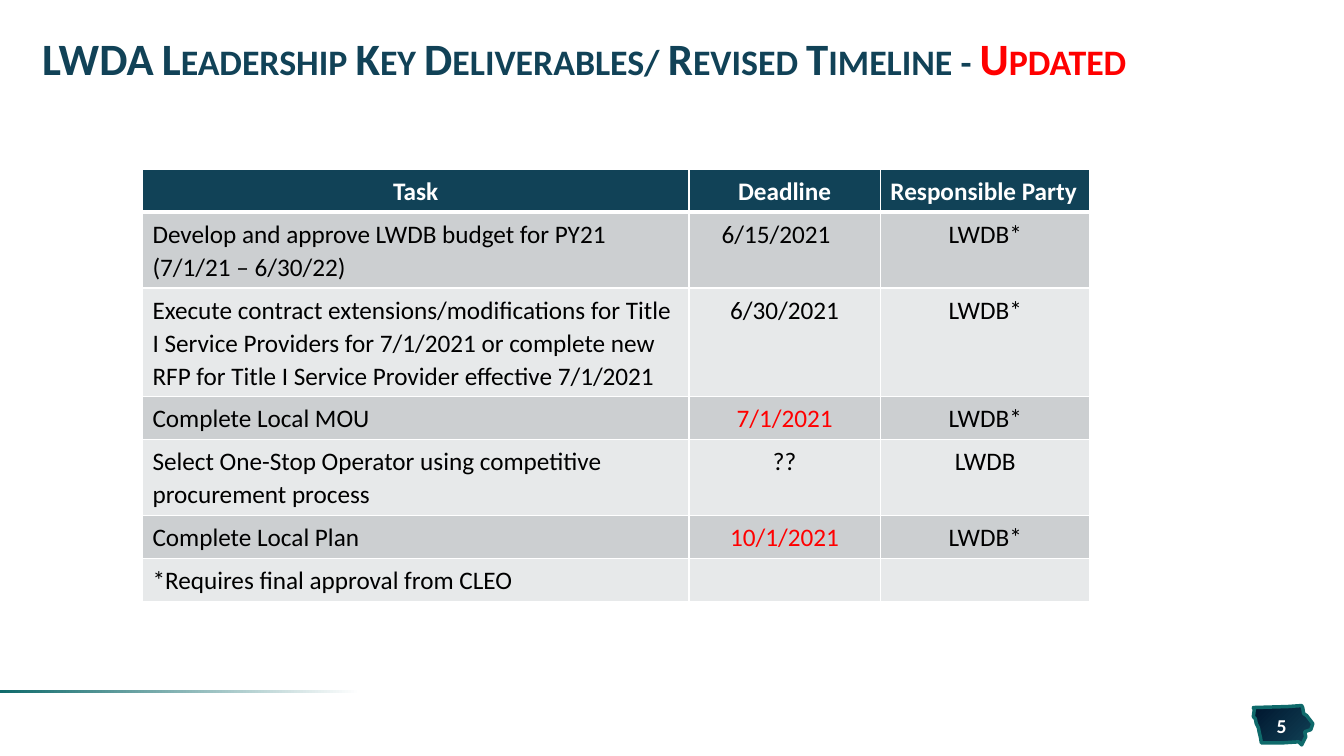
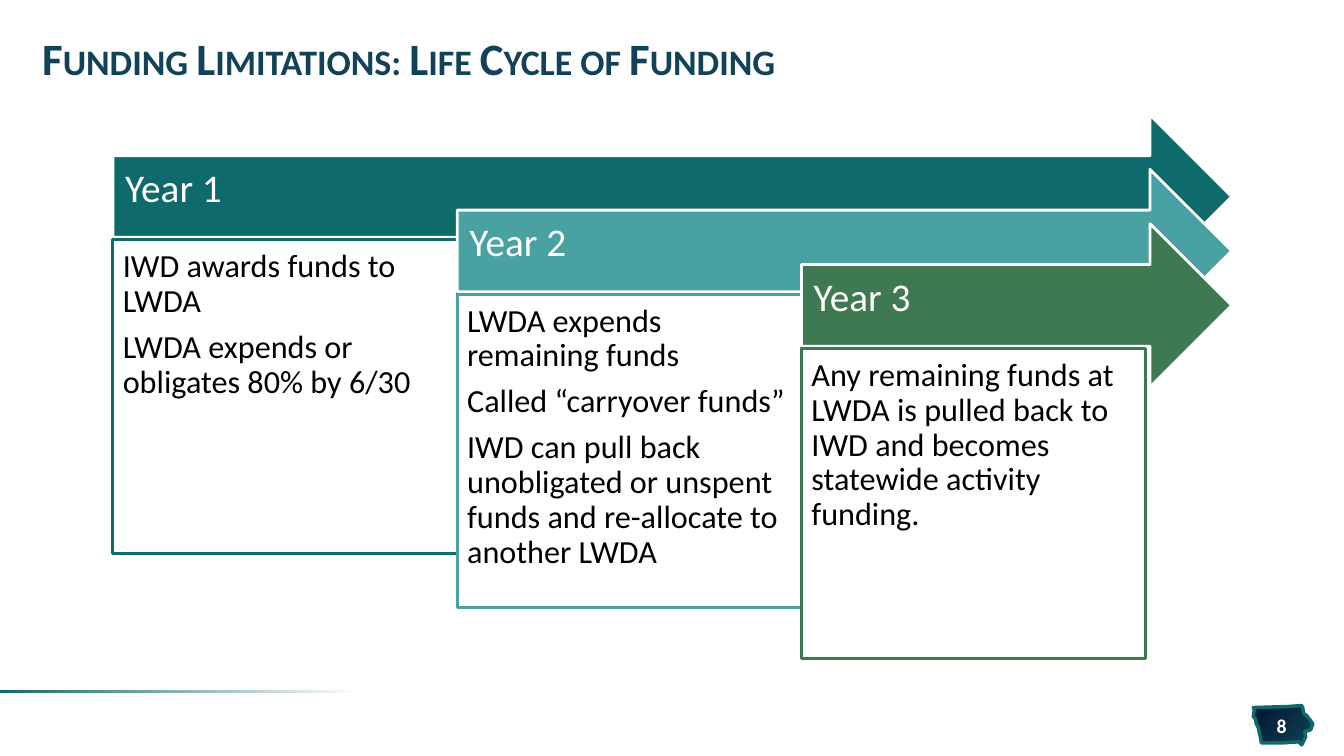
from dataclasses import dataclass

from lxml import etree
from pptx import Presentation
from pptx.dml.color import RGBColor
from pptx.enum.shapes import MSO_SHAPE
from pptx.enum.text import MSO_ANCHOR, PP_ALIGN
from pptx.oxml.ns import qn
from pptx.util import Emu, Inches, Pt

RECTANGLE = MSO_SHAPE.RECTANGLE
RIGHT_ARROW = MSO_SHAPE.RIGHT_ARROW
LEFT = PP_ALIGN.LEFT
CENTER = PP_ALIGN.CENTER
TOP = MSO_ANCHOR.TOP
MIDDLE = MSO_ANCHOR.MIDDLE

COLORS = {
    "navy": "114257",
    "midnight": "00162E",
    "teal": "0F6A6B",
    "aqua": "49A1A2",
    "green": "3E7951",
    "red": "FF0000",
    "black": "000000",
    "white": "FFFFFF",
    "dark_band": "CCCFD1",
    "light_band": "E7E9EA",
}
FONT = "Calibri"
SLIDE_WIDTH = Inches(13.33)
SLIDE_HEIGHT = Inches(7.5)
COLUMN = SLIDE_WIDTH / 100
ROW = SLIDE_HEIGHT / 100


@dataclass(frozen=True)
class Area:
    left: float
    top: float
    width: float
    height: float

    def emu(self) -> tuple[Emu, Emu, Emu, Emu]:
        return (Emu(round(self.left * COLUMN)), Emu(round(self.top * ROW)),
                Emu(round(self.width * COLUMN)), Emu(round(self.height * ROW)))


@dataclass(frozen=True)
class Task:
    name: str
    deadline: str = ""
    party: str = ""
    lines: int = 1
    deadline_color: str = "black"
    deadline_shift: float = 0


@dataclass(frozen=True)
class Year:
    label: str
    color: str
    notes: tuple[str, ...]
    box_height: float = 41.47


TITLE_AREA = Area(2.4, 3.2, 95.2, 10)
RULE_AREA = Area(0, 91.33, 28.5, 0.4)
NUMBER_AREA = Area(93.45, 94.4, 3.83, 3.07)
STATE_AREA = Area(93.25, 93.33, 4.35, 5.2)
STATE_OUTLINE = (
    (48, 0), (34, 1), (0, 2), (1, 4), (0, 11), (2, 13), (3, 18), (5, 22),
    (6, 27), (7, 31), (8, 37), (29, 37), (45, 36), (48, 39), (49, 37),
    (52, 31), (51, 26), (57, 24), (59, 18), (56, 14), (53, 10), (50, 8), (49, 2),
)

TABLE_LEFT, TABLE_TOP = 10.6, 22.4
TABLE_COLUMNS = (40.66, 14.25, 15.6)
LINE_ROWS, CELL_PADDING_ROWS = 4.35, 1.33
HEADINGS = (("Task", CENTER), ("Deadline", CENTER), ("Responsible Party", LEFT))
TASKS = (
    Task("Develop and approve LWDB budget for PY21 (7/1/21 – 6/30/22)",
         "6/15/2021", "LWDB*", lines=2, deadline_shift=0.17),
    Task("Execute contract extensions/modifications for Title I Service Providers "
         "for 7/1/2021 or complete new RFP for Title I Service Provider effective 7/1/2021",
         "6/30/2021", "LWDB*", lines=3),
    Task("Complete Local MOU", "7/1/2021", "LWDB*", deadline_color="red"),
    Task("Select One-Stop Operator using competitive procurement process",
         "??", "LWDB", lines=2),
    Task("Complete Local Plan", "10/1/2021", "LWDB*", deadline_color="red"),
    Task("*Requires final approval from CLEO"),
)

CASCADE_LEFT, CASCADE_TOP, CASCADE_RIGHT = 8.4, 15.2, 91.65
STEP_COLUMNS, STEP_ROWS = 25.62, 7.2
ARROW_ROWS, BOX_OFFSET_ROWS = 21.6, 16.53
YEARS = (
    Year("Year 1", "teal", ("IWD awards funds to LWDA",
                            "LWDA expends or obligates 80% by 6/30")),
    Year("Year 2", "aqua", ("LWDA expends remaining funds",
                            "Called “carryover funds”",
                            "IWD can pull back unobligated or unspent funds and "
                            "re-allocate to another LWDA")),
    Year("Year 3", "green", ("Any remaining funds at LWDA is pulled back to IWD and "
                             "becomes statewide activity funding.",), 40.93),
)


def rgb(name: str) -> RGBColor:
    return RGBColor.from_string(COLORS[name])


def style_paragraph(paragraph, size: float, color: str, bold: bool = False,
                    alignment=LEFT, line_spacing: float = 1, **attributes: str) -> None:
    paragraph.alignment = alignment
    paragraph.line_spacing = line_spacing
    font = paragraph.font
    font.name, font.size, font.bold = FONT, Pt(size), bold
    font.color.rgb = rgb(color)
    properties = paragraph._p.get_or_add_pPr().find(qn("a:defRPr"))
    for name, value in attributes.items():
        properties.set(name, value)


def prepare_frame(shape, anchor, insets: tuple[float, float, float, float]):
    frame = shape.text_frame
    frame.word_wrap = True
    frame.vertical_anchor = anchor
    (frame.margin_left, frame.margin_top,
     frame.margin_right, frame.margin_bottom) = map(Inches, insets)
    return frame


def fill_gradient(shape, angle: float, stops: tuple[tuple[float, str], ...]) -> None:
    shape.fill.gradient()
    shape.fill.gradient_angle = angle
    for stop, (position, color) in zip(shape.fill.gradient_stops, stops):
        stop.position = position
        stop.color.rgb = rgb(color)


def add_panel(slide, kind, area: Area, fill: str, line: str):
    shape = slide.shapes.add_shape(kind, *area.emu())
    shape.shadow.inherit = False
    shape.fill.solid()
    shape.fill.fore_color.rgb = rgb(fill)
    shape.line.color.rgb = rgb(line)
    shape.line.width = Pt(2)
    return shape


def add_footer(slide, number: int) -> None:
    builder = slide.shapes.build_freeform(*STATE_OUTLINE[0], scale=Inches(0.01))
    builder.add_line_segments(STATE_OUTLINE[1:], close=True)
    left, top, _, _ = STATE_AREA.emu()
    state = builder.convert_to_shape(left, top)
    state.shadow.inherit = False
    fill_gradient(state, 315, ((0, "midnight"), (1, "navy")))
    state.line.color.rgb = rgb("teal")
    state.line.width = Pt(2.5)

    rule = slide.shapes.add_shape(RECTANGLE, *RULE_AREA.emu())
    rule.shadow.inherit = False
    fill_gradient(rule, 180, ((0.06, "white"), (1, "teal")))
    rule.line.fill.background()

    number_box = slide.shapes.add_textbox(*NUMBER_AREA.emu())
    paragraph = prepare_frame(number_box, MIDDLE, (0, 0.05, 0, 0.05)).paragraphs[0]
    paragraph.text = str(number)
    style_paragraph(paragraph, 14, "white", True, CENTER, spc="50")


def add_title(slide, title: str, highlight: str = "") -> None:
    title_box = slide.shapes.add_textbox(*TITLE_AREA.emu())
    paragraph = prepare_frame(title_box, MIDDLE, (0.1, 0.05, 0.1, 0.05)).paragraphs[0]
    paragraph.add_run().text = title
    style_paragraph(paragraph, 32, "navy", True, line_spacing=0.85, cap="small")
    if highlight:
        run = paragraph.add_run()
        run.text = highlight
        run.font.color.rgb = rgb("red")


def add_slide(presentation, number: int, title: str, highlight: str = ""):
    slide = presentation.slides.add_slide(presentation.slide_layouts[6])
    add_footer(slide, number)
    add_title(slide, title, highlight)
    return slide


def border_cell(cell, top: float, bottom: float) -> None:
    properties = cell._tc.get_or_add_tcPr()
    for side, width in (("L", 1), ("R", 1), ("T", top), ("B", bottom)):
        line = etree.SubElement(properties, qn(f"a:ln{side}"), w=str(Pt(width)))
        fill = etree.SubElement(line, qn("a:solidFill"))
        etree.SubElement(fill, qn("a:srgbClr"), val=COLORS["white"])


def write_cell(cell, text: str, fill: str, color: str, alignment,
               bold: bool = False, top: float = 1, bottom: float = 1) -> None:
    border_cell(cell, top, bottom)
    cell.fill.solid()
    cell.fill.fore_color.rgb = rgb(fill)
    paragraph = cell.text_frame.paragraphs[0]
    paragraph.text = text
    style_paragraph(paragraph, 18, color, bold, alignment, 1.07)


def add_timeline_table(slide) -> None:
    heights = [CELL_PADDING_ROWS + LINE_ROWS * lines
               for lines in (1, *(task.lines for task in TASKS))]
    area = Area(TABLE_LEFT, TABLE_TOP, sum(TABLE_COLUMNS), sum(heights))
    table = slide.shapes.add_table(len(heights), len(TABLE_COLUMNS), *area.emu()).table
    for column, width in zip(table.columns, TABLE_COLUMNS):
        column.width = Emu(round(width * COLUMN))
    for row, height in zip(table.rows, heights):
        row.height = Emu(round(height * ROW))
    for index, (heading, alignment) in enumerate(HEADINGS):
        write_cell(table.cell(0, index), heading, "navy", "white", alignment, True, bottom=3)
    for row, task in enumerate(TASKS, start=1):
        band = "dark_band" if row % 2 else "light_band"
        top = 3 if row == 1 else 1
        entries = ((task.name, "black", LEFT),
                   (task.deadline, task.deadline_color, CENTER),
                   (task.party, "black", CENTER))
        for index, (text, color, alignment) in enumerate(entries):
            write_cell(table.cell(row, index), text, band, color, alignment, top=top)
        table.cell(row, 1).margin_right = Inches(0.1 + task.deadline_shift)


def add_year(slide, index: int, year: Year) -> None:
    left = CASCADE_LEFT + index * STEP_COLUMNS
    top = CASCADE_TOP + index * STEP_ROWS
    arrow_area = Area(left, top, CASCADE_RIGHT - left, ARROW_ROWS)
    arrow = add_panel(slide, RIGHT_ARROW, arrow_area, year.color, "white")
    label = prepare_frame(arrow, MIDDLE, (0.12, 0.12, 0.28, 0.26)).paragraphs[0]
    label.text = year.label
    style_paragraph(label, 28, "white", line_spacing=0.9)

    box_area = Area(left, top + BOX_OFFSET_ROWS, STEP_COLUMNS, year.box_height)
    box = add_panel(slide, RECTANGLE, box_area, "white", year.color)
    frame = prepare_frame(box, TOP, (0.1, 0.1, 0.1, 0.1))
    frame.text = "\n".join(year.notes)
    for paragraph in frame.paragraphs:
        style_paragraph(paragraph, 23, "black", line_spacing=0.9)
        paragraph.space_after = Pt(8)


def main() -> None:
    presentation = Presentation()
    presentation.slide_width = SLIDE_WIDTH
    presentation.slide_height = SLIDE_HEIGHT

    timeline = add_slide(presentation, 5,
                         "LWDA Leadership Key Deliverables/ Revised Timeline - ", "Updated")
    add_timeline_table(timeline)

    life_cycle = add_slide(presentation, 8, "Funding Limitations: Life Cycle of Funding")
    for index, year in enumerate(YEARS):
        add_year(life_cycle, index, year)

    presentation.save("out.pptx")


if __name__ == "__main__":
    main()
